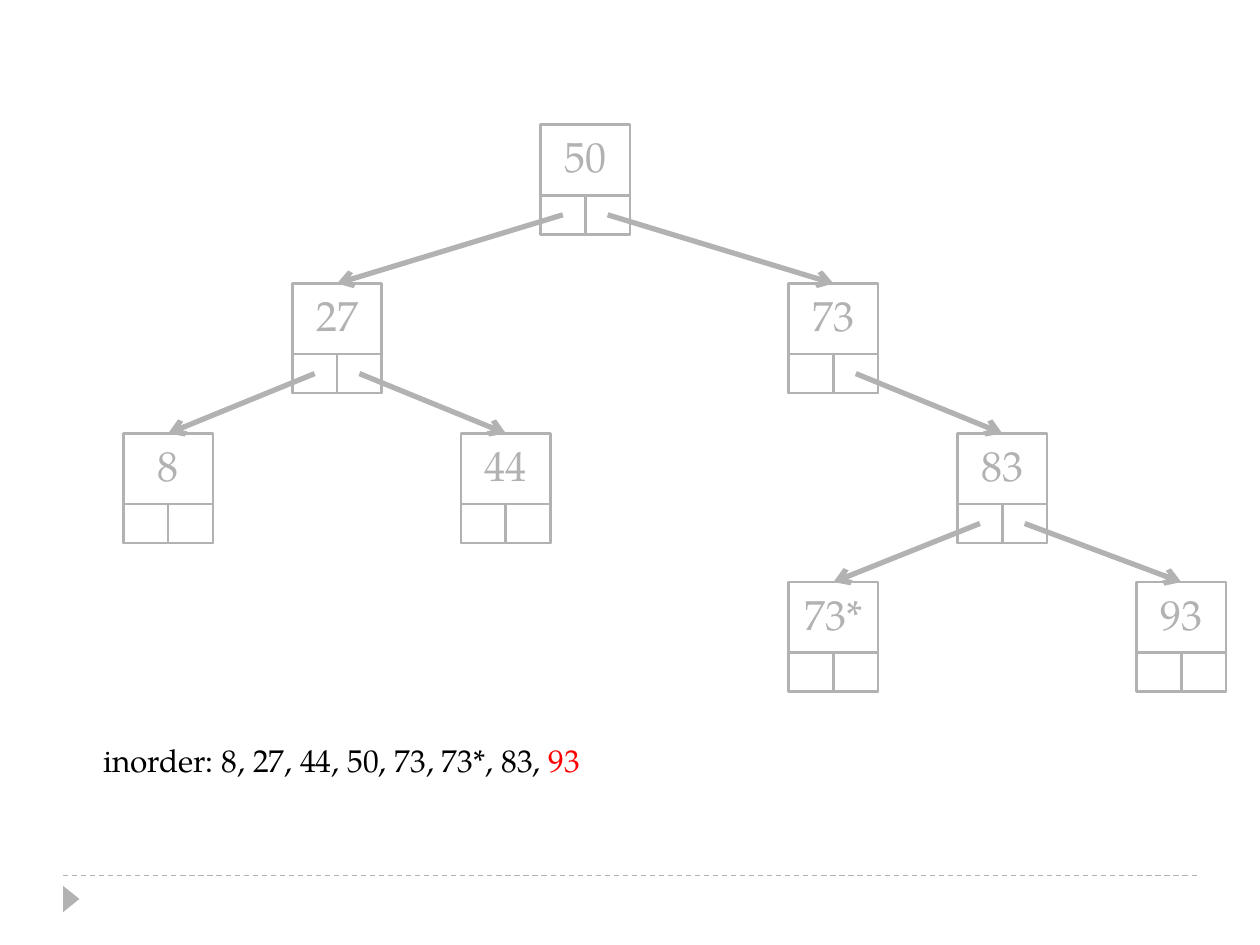
from pptx import Presentation
from pptx.dml.color import RGBColor
from pptx.enum.dml import MSO_LINE
from pptx.enum.shapes import MSO_CONNECTOR, MSO_SHAPE
from pptx.enum.text import MSO_ANCHOR, MSO_AUTO_SIZE, PP_ALIGN
from pptx.oxml.ns import qn
from pptx.util import Inches, Pt
from lxml import etree

STRAIGHT = MSO_CONNECTOR.STRAIGHT
RECTANGLE = MSO_SHAPE.RECTANGLE
TRIANGLE = MSO_SHAPE.ISOSCELES_TRIANGLE
DASH = MSO_LINE.DASH
TOP = MSO_ANCHOR.TOP
CENTER = PP_ALIGN.CENTER
NO_AUTO_SIZE = MSO_AUTO_SIZE.NONE
FIT_SHAPE = MSO_AUTO_SIZE.SHAPE_TO_FIT_TEXT

COLORS = {"gray": "B2B2B2", "black": "000000", "red": "FF0000"}
FONT = "TeX Gyre Pagella"

NODE_WIDTH, NODE_HEIGHT = 0.71, 0.87
SLOT_WIDTH, SLOT_HEIGHT = NODE_WIDTH / 2, 0.31
SLOT_TOP = NODE_HEIGHT - SLOT_HEIGHT
LEVEL_TOPS = [0.99, 2.25, 3.44, 4.62]

NODES = {
    "50": (4.29, 0),
    "27": (2.32, 1),
    "73": (6.26, 1),
    "8": (0.98, 2),
    "44": (3.66, 2),
    "83": (7.6, 2),
    "73*": (6.26, 3),
    "93": (9.02, 3),
}
LEFT_SLOT, RIGHT_SLOT = 0, 1
LINKS = [
    ("50", LEFT_SLOT, "27"),
    ("50", RIGHT_SLOT, "73"),
    ("27", LEFT_SLOT, "8"),
    ("27", RIGHT_SLOT, "44"),
    ("73", RIGHT_SLOT, "83"),
    ("83", LEFT_SLOT, "73*"),
    ("83", RIGHT_SLOT, "93"),
]


def add_run(paragraph, text, size=18, color="black"):
    run = paragraph.add_run()
    run.text = text
    run.font.name = FONT
    run.font.size = Pt(size)
    run.font.color.rgb = RGBColor.from_string(COLORS[color])


class TreeSlide:
    def __init__(self, slide, color="gray"):
        self.slide = slide
        self.color = color
        self.rgb = RGBColor.from_string(COLORS[color])

    def line(self, start, end, width, dash=None, arrow=False):
        connector = self.slide.shapes.add_connector(
            STRAIGHT, *(Inches(value) for value in (*start, *end)))
        connector.line.color.rgb = self.rgb
        connector.line.width = Pt(width)
        if dash is not None:
            connector.line.dash_style = dash
        if arrow:
            tail = etree.SubElement(connector.line._get_or_add_ln(), qn("a:tailEnd"))
            tail.set("type", "arrow")
        etree.SubElement(connector._element.spPr, qn("a:effectLst"))

    def shape(self, kind, left, top, width, height):
        shape = self.slide.shapes.add_shape(
            kind, Inches(left), Inches(top), Inches(width), Inches(height))
        shape.shadow.inherit = False
        return shape

    def box(self, left, top, width, height):
        shape = self.shape(RECTANGLE, left, top, width, height)
        shape.fill.background()
        shape.line.color.rgb = self.rgb
        shape.line.width = Pt(1.5)
        return shape

    def marker(self, left, top, width, height):
        shape = self.shape(TRIANGLE, left, top, width, height)
        shape.rotation = 90
        shape.fill.solid()
        shape.fill.fore_color.rgb = self.rgb
        shape.line.fill.background()

    def node(self, label, left, top):
        frame = self.box(left, top, NODE_WIDTH, NODE_HEIGHT).text_frame
        frame.word_wrap = False
        frame.auto_size = NO_AUTO_SIZE
        frame.vertical_anchor = TOP
        paragraph = frame.paragraphs[0]
        paragraph.alignment = CENTER
        add_run(paragraph, label, size=24, color=self.color)
        for slot in (LEFT_SLOT, RIGHT_SLOT):
            self.box(left + slot * SLOT_WIDTH, top + SLOT_TOP, SLOT_WIDTH, SLOT_HEIGHT)

    def link(self, parent, slot, child):
        parent_left, parent_level = NODES[parent]
        child_left, child_level = NODES[child]
        start = (parent_left + (slot + 0.5) * SLOT_WIDTH,
                 LEVEL_TOPS[parent_level] + SLOT_TOP + SLOT_HEIGHT / 2)
        end = (child_left + NODE_WIDTH / 2, LEVEL_TOPS[child_level])
        self.line(start, end, 3, arrow=True)

    def text(self, left, top, width, height, runs):
        shape = self.slide.shapes.add_textbox(
            Inches(left), Inches(top), Inches(width), Inches(height))
        frame = shape.text_frame
        frame.word_wrap = False
        frame.auto_size = FIT_SHAPE
        for text, color in runs:
            add_run(frame.paragraphs[0], text, color=color)


def main():
    presentation = Presentation()
    presentation.slide_width = Inches(10)
    presentation.slide_height = Inches(7.5)
    tree = TreeSlide(presentation.slides.add_slide(presentation.slide_layouts[6]))

    tree.line((0.5, 6.95), (9.5, 6.95), 0.75, dash=DASH)
    tree.marker(0.46, 7.07, 0.21, 0.13)
    for label, (left, level) in NODES.items():
        tree.node(label, left, LEVEL_TOPS[level])
    for parent, slot, child in LINKS:
        tree.link(parent, slot, child)
    tree.text(0.72, 5.83, 4.02, 0.4, [
        ("inorder: 8, 27, 44, 50, 73, 73*, 83, ", "black"), ("93", "red")])

    presentation.save("out.pptx")


if __name__ == "__main__":
    main()
